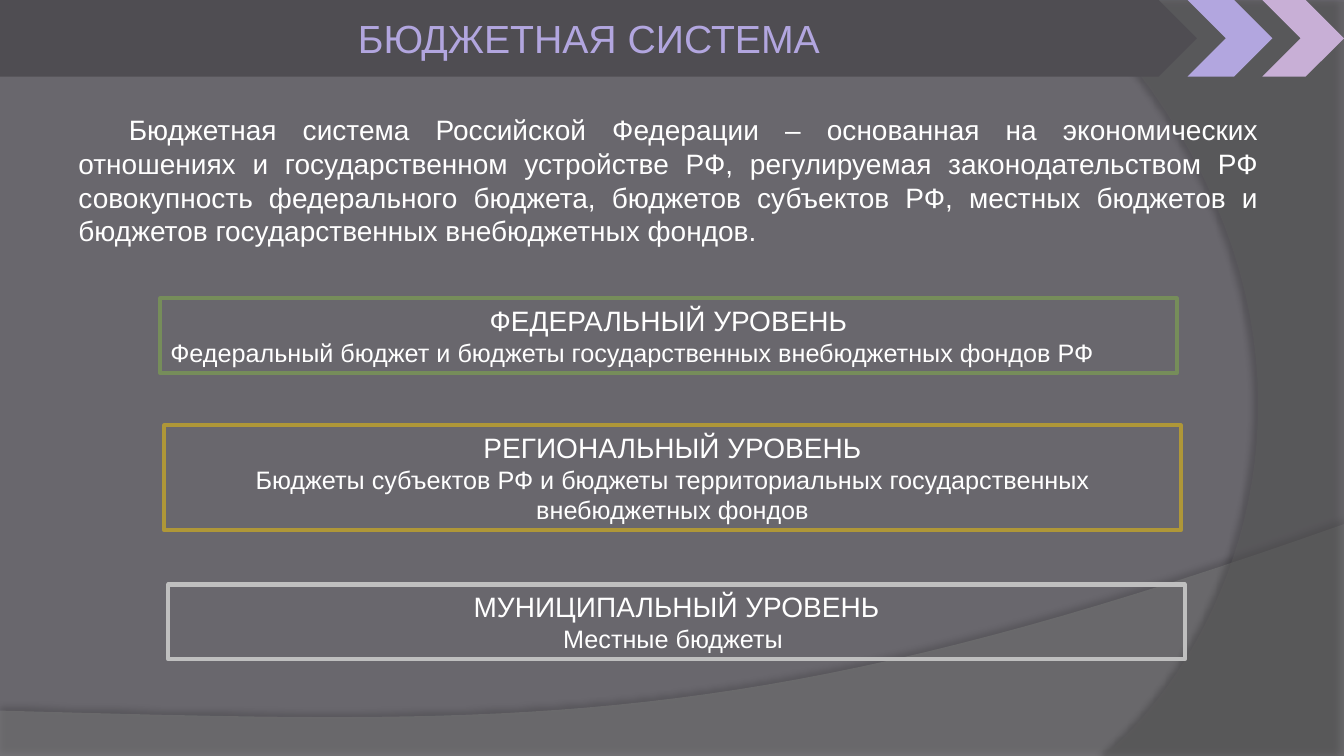
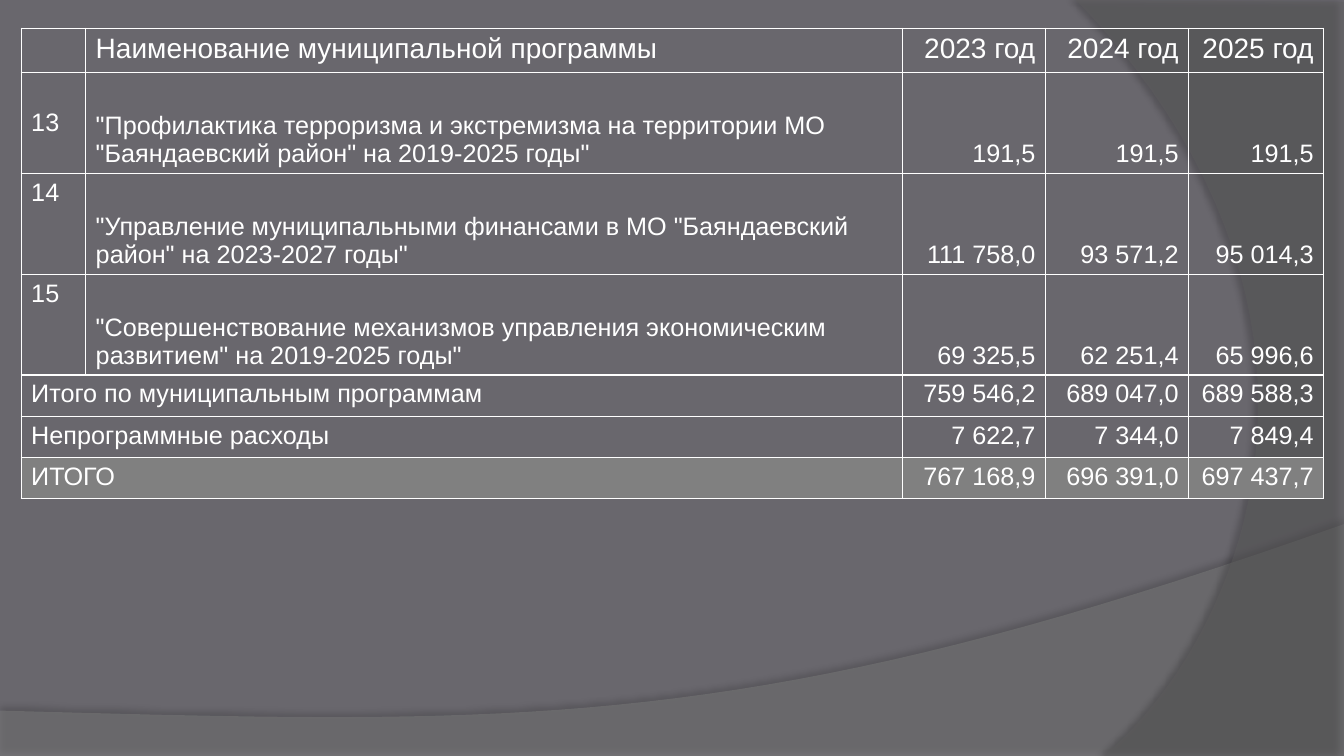
"""Build two slides on the budget system and the municipal programmes."""
from lxml import etree
from pptx import Presentation
from pptx.dml.color import RGBColor
from pptx.enum.shapes import MSO_SHAPE
from pptx.enum.text import MSO_ANCHOR, PP_ALIGN
from pptx.oxml.ns import qn
from pptx.util import Inches, Pt

RECTANGLE, PENTAGON, CHEVRON = MSO_SHAPE.RECTANGLE, MSO_SHAPE.PENTAGON, MSO_SHAPE.CHEVRON
LEFT, CENTER, RIGHT, JUSTIFY = PP_ALIGN.LEFT, PP_ALIGN.CENTER, PP_ALIGN.RIGHT, PP_ALIGN.JUSTIFY
TOP, MIDDLE, BOTTOM = MSO_ANCHOR.TOP, MSO_ANCHOR.MIDDLE, MSO_ANCHOR.BOTTOM

BACKGROUND = RGBColor(0x69, 0x67, 0x6D)
WAVE = RGBColor(0x7F, 0x7F, 0x7F)
SIDE = RGBColor(0x5E, 0x5E, 0x5E)
BAND = RGBColor(0x4F, 0x4D, 0x52)
LILAC = RGBColor(0xB2, 0xA6, 0xDF)
PINK = RGBColor(0xC8, 0xAF, 0xD6)
GREEN = RGBColor(0x76, 0x8D, 0x5A)
GOLD = RGBColor(0xAF, 0x97, 0x38)
SILVER = RGBColor(0xBF, 0xBF, 0xBF)
TOTAL = RGBColor(0x80, 0x80, 0x80)
WHITE = RGBColor(0xFF, 0xFF, 0xFF)

FONT = "Arial"
HEADING_SIZE, BODY_SIZE, TITLE_SIZE = 20, 18, 28
WIDTH, HEIGHT = 13.33, 7.5
CURVE_STEPS = 40

LEVELS = [
    (1.59, 2.96, 0.74, GREEN, "ФЕДЕРАЛЬНЫЙ УРОВЕНЬ",
     "Федеральный бюджет и бюджеты государственных внебюджетных фондов РФ", LEFT),
    (1.63, 4.22, 1.04, GOLD, "РЕГИОНАЛЬНЫЙ УРОВЕНЬ",
     "Бюджеты субъектов РФ и бюджеты территориальных государственных внебюджетных фондов", CENTER),
    (1.67, 5.8, 0.74, SILVER, "МУНИЦИПАЛЬНЫЙ УРОВЕНЬ", "Местные бюджеты ", CENTER),
]
HEADER = ["", "Наименование муниципальной программы", "2023 год", "2024 год", "2025 год"]
PROGRAMMES = [
    ["13", '"Профилактика терроризма и экстремизма на территории МО "Баяндаевский район" на 2019-2025 годы"',
     "191,5", "191,5", "191,5"],
    ["14", '"Управление муниципальными финансами в МО "Баяндаевский район" на 2023-2027 годы"',
     "111 758,0", "93 571,2", "95 014,3"],
    ["15", '"Совершенствование механизмов управления экономическим развитием" на 2019-2025 годы"',
     "69 325,5", "62 251,4", "65 996,6"],
]
SUMMARY = [
    ["Итого по муниципальным программам", "", "759 546,2", "689 047,0", "689 588,3"],
    ["Непрограммные расходы", "", "7 622,7", "7 344,0", "7 849,4"],
    ["ИТОГО", "", "767 168,9", "696 391,0", "697 437,7"],
]


def bezier(start, first, second, end):
    """Return points along a cubic curve, without its start."""
    points = []
    for step in range(1, CURVE_STEPS + 1):
        t = step / CURVE_STEPS
        weights = ((1 - t) ** 3, 3 * t * (1 - t) ** 2, 3 * t * t * (1 - t), t ** 3)
        corners = (start, first, second, end)
        points.append(tuple(sum(w * c[axis] for w, c in zip(weights, corners)) for axis in (0, 1)))
    return points


class Deck:
    """Hold the shared style and the current slide."""

    def __init__(self):
        """Start an empty wide presentation."""
        self.presentation = Presentation()
        self.presentation.slide_width = Inches(WIDTH)
        self.presentation.slide_height = Inches(HEIGHT)
        self.slide = None

    def add_slide(self):
        """Add a slide with the shared backdrop."""
        self.slide = self.presentation.slides.add_slide(self.presentation.slide_layouts[6])
        fill = self.slide.background.fill
        fill.solid()
        fill.fore_color.rgb = BACKGROUND
        wave = [(0, 7.05), (0, HEIGHT), (WIDTH, HEIGHT), (WIDTH, 5.2)]
        wave += bezier(wave[-1], (7.45, 7.29), (5.21, 7.19), (0, 7.05))
        self.backdrop(wave, WAVE, 45, 35, 3.5, 270)
        side = [(WIDTH, 0.02), (WIDTH, HEIGHT), (10.95, HEIGHT)]
        side += bezier(side[-1], (12.46, 6.19), (13.57, 3), (10.67, 0))
        self.backdrop(side, SIDE, 40, 45, 4, 180)

    def backdrop(self, points, color, opacity, shadow_opacity, distance, angle):
        """Draw a translucent outline with a soft shadow."""
        corners = [(Inches(x), Inches(y)) for x, y in points]
        builder = self.slide.shapes.build_freeform(*corners[0])
        builder.add_line_segments(corners[1:], close=True)
        shape = builder.convert_to_shape()
        self.paint(shape, color)
        properties = shape._element.spPr
        color_element = properties.find(qn("a:solidFill"))[0]
        etree.SubElement(color_element, qn("a:alpha"), val=str(opacity * 1000))
        effects = properties.find(qn("a:effectLst"))
        shadow = etree.SubElement(effects, qn("a:outerShdw"), blurRad=str(Pt(4)), dist=str(Pt(distance)),
                                  dir=str(angle * 60000), algn="ctr", rotWithShape="0")
        shade = etree.SubElement(shadow, qn("a:srgbClr"), val="000000")
        etree.SubElement(shade, qn("a:alpha"), val=str(shadow_opacity * 1000))

    def paint(self, shape, fill=None, line=None):
        """Set the fill and the line, and drop the shadow."""
        shape.shadow.inherit = False
        if fill is None:
            shape.fill.background()
        else:
            shape.fill.solid()
            shape.fill.fore_color.rgb = fill
        if line is None:
            shape.line.fill.background()
        else:
            shape.line.color.rgb = line
            shape.line.width = Pt(3)

    def add_text(self, paragraph, text, size, align=LEFT, color=WHITE):
        """Add one styled run to a paragraph."""
        paragraph.alignment = align
        paragraph.font.size = Pt(size)
        if text:
            run = paragraph.add_run()
            run.text = text
            run.font.name = FONT
            run.font.size = Pt(size)
            run.font.color.rgb = color

    def shape(self, kind, left, top, width, height, fill=None, line=None):
        """Add a preset shape."""
        shape = self.slide.shapes.add_shape(kind, Inches(left), Inches(top), Inches(width), Inches(height))
        self.paint(shape, fill, line)
        return shape

    def title(self, text):
        """Add the title band with its two chevrons."""
        band = self.shape(PENTAGON, 0, 0, 11.87, 0.76, BAND)
        band.text_frame.vertical_anchor = MIDDLE
        self.add_text(band.text_frame.paragraphs[0], text, TITLE_SIZE, CENTER, LILAC)
        self.shape(CHEVRON, 11.78, 0, 0.84, 0.76, LILAC)
        self.shape(CHEVRON, 12.52, 0, 0.81, 0.76, PINK)

    def body(self, text, left, top, width, height):
        """Add a justified paragraph with an indented first line."""
        box = self.slide.shapes.add_textbox(Inches(left), Inches(top), Inches(width), Inches(height))
        box.text_frame.word_wrap = True
        paragraph = box.text_frame.paragraphs[0]
        paragraph._p.get_or_add_pPr().set("indent", str(Inches(0.5)))
        self.add_text(paragraph, text, HEADING_SIZE, JUSTIFY)

    def level(self, left, top, height, color, heading, text, align):
        """Add an outlined box for one budget level."""
        frame = self.shape(RECTANGLE, left, top, 10.08, height, line=color).text_frame
        frame.word_wrap = True
        frame.vertical_anchor = TOP
        self.add_text(frame.paragraphs[0], heading, HEADING_SIZE, CENTER)
        self.add_text(frame.add_paragraph(), text, BODY_SIZE, align)

    def cell(self, cell, text, size, align, anchor, fill):
        """Fill one bordered table cell."""
        properties = cell._tc.get_or_add_tcPr()
        for side in ("a:lnL", "a:lnR", "a:lnT", "a:lnB"):
            line = etree.SubElement(properties, qn(side), w=str(Pt(1)))
            solid = etree.SubElement(line, qn("a:solidFill"))
            etree.SubElement(solid, qn("a:srgbClr"), val=str(WHITE))
        if fill is None:
            cell.fill.background()
        else:
            cell.fill.solid()
            cell.fill.fore_color.rgb = fill
        cell.vertical_anchor = anchor
        self.add_text(cell.text_frame.paragraphs[0], text, size, align)

    def programme_table(self, left, top, widths):
        """Add the table of programmes with its summary rows."""
        rows = [HEADER] + PROGRAMMES + SUMMARY
        heights = [0.44] + [1] * len(PROGRAMMES) + [0.41] * len(SUMMARY)
        first_summary = len(rows) - len(SUMMARY)
        frame = self.slide.shapes.add_table(len(rows), len(widths), Inches(left), Inches(top),
                                            Inches(sum(widths)), Inches(sum(heights)))
        table = frame.table
        table.first_row = table.horz_banding = False
        for column, width in zip(table.columns, widths):
            column.width = Inches(width)
        for index, (row, height) in enumerate(zip(rows, heights)):
            table.rows[index].height = Inches(height)
            programme = 0 < index < first_summary
            for number, text in enumerate(row):
                anchor = BOTTOM if programme and number else TOP
                if index == 1 and number == 0:
                    anchor = MIDDLE
                self.cell(table.cell(index, number), text, BODY_SIZE if index else HEADING_SIZE,
                          RIGHT if number > 1 else LEFT, anchor,
                          TOTAL if index == len(rows) - 1 else None)
            if index >= first_summary:
                table.cell(index, 0).merge(table.cell(index, 1))


def main():
    """Build and save the presentation."""
    deck = Deck()
    deck.add_slide()
    deck.body("Бюджетная система Российской Федерации – основанная на экономических отношениях "
              "и государственном устройстве РФ, регулируемая законодательством РФ совокупность "
              "федерального бюджета, бюджетов субъектов РФ, местных бюджетов и бюджетов "
              "государственных внебюджетных фондов. ", 0.68, 1.07, 11.9, 1.45)
    for level in LEVELS:
        deck.level(*level)
    deck.title("БЮДЖЕТНАЯ СИСТЕМА")

    deck.add_slide()
    deck.programme_table(0.21, 0.28, [0.64, 8.1, 1.42, 1.42, 1.34])
    deck.presentation.save("out.pptx")


if __name__ == "__main__":
    main()
